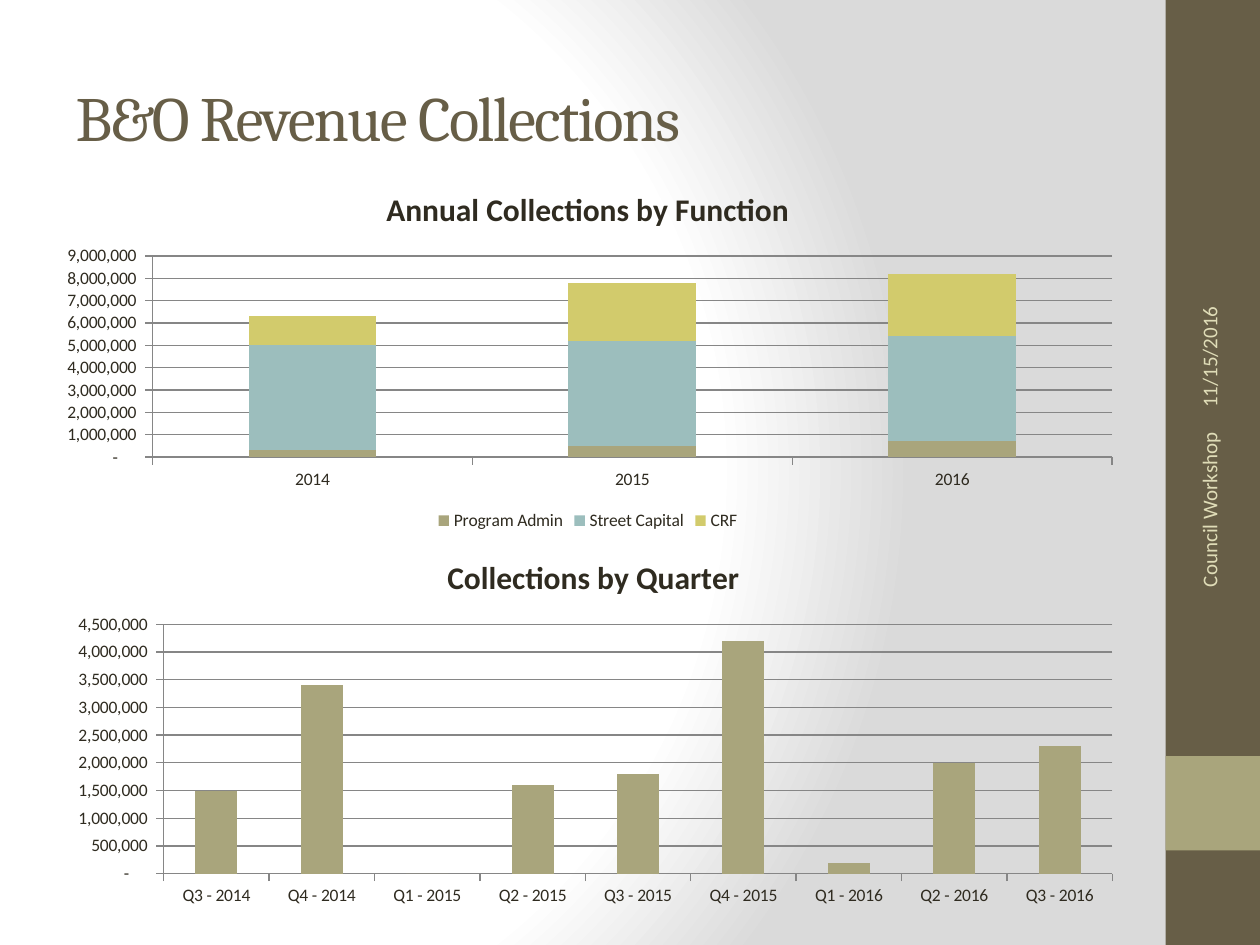
from dataclasses import dataclass

from lxml import etree
from pptx import Presentation
from pptx.chart.data import CategoryChartData
from pptx.dml.color import RGBColor
from pptx.enum.chart import XL_CHART_TYPE as ChartType
from pptx.enum.chart import XL_LEGEND_POSITION as LegendPos
from pptx.enum.chart import XL_TICK_MARK as Tick
from pptx.enum.shapes import MSO_SHAPE as Shape
from pptx.enum.text import MSO_ANCHOR as Anchor
from pptx.enum.text import PP_ALIGN as Align
from pptx.util import Inches, Pt

NUMBER_FORMAT = r'_(* #,##0_);_(* \(#,##0\);_(* "-"??_);_('
A_NS = "http://schemas.openxmlformats.org/drawingml/2006/main"


@dataclass(frozen=True)
class Theme:
    heading_font: str = "Cambria"
    body_font: str = "Calibri"
    title_size: int = 36
    chart_title_size: int = 18
    side_size: int = 12
    chart_size: int = 10
    brown: str = "675E47"
    olive: str = "A9A57C"
    teal: str = "9CBEBD"
    yellow: str = "D2CB6C"
    cream: str = "DFDCB7"
    ink: str = "2F2B20"
    grid: str = "868686"
    light: str = "FFFFFF"
    shade: str = "DADADA"


def rgb(color):
    return RGBColor.from_string(color)


def box(left, top, width, height):
    return [Inches(v) for v in (left, top, width, height)]


class SlideBuilder:
    def __init__(self, slide, theme):
        self.slide = slide
        self.theme = theme

    def set_font(self, font, size, color, name=None, bold=False):
        font.name = name or self.theme.body_font
        font.size = Pt(size)
        font.bold = bold
        font.color.rgb = rgb(color)

    def background(self):
        """Radial gradient centred left of the middle of the slide."""
        t = self.theme
        stops = "".join(
            f'<a:gs pos="{pos * 1000}"><a:srgbClr val="{color}"/></a:gs>'
            for pos, color in ((0, t.light), (75, t.light), (100, t.shade)))
        gradient = etree.fromstring(
            f'<a:gradFill xmlns:a="{A_NS}" rotWithShape="1"><a:gsLst>{stops}</a:gsLst>'
            '<a:path path="circle"><a:fillToRect l="20000" t="50000" r="100000" b="50000"/>'
            '</a:path></a:gradFill>')
        self.slide.background.fill.solid()
        solid = next(self.slide.element.iter(f"{{{A_NS}}}solidFill"))
        solid.getparent().replace(solid, gradient)

    def rect(self, place, color):
        sp = self.slide.shapes.add_shape(Shape.RECTANGLE, *box(*place))
        sp.shadow.inherit = False
        sp.fill.solid()
        sp.fill.fore_color.rgb = rgb(color)
        sp.line.fill.background()

    def title(self, place, text):
        t = self.theme
        sp = self.slide.shapes.title
        sp.left, sp.top, sp.width, sp.height = box(*place)
        tf = sp.text_frame
        tf.text = text
        tf.vertical_anchor = Anchor.MIDDLE
        p = tf.paragraphs[0]
        p.alignment = Align.LEFT
        self.set_font(p.font, t.title_size, t.brown, t.heading_font)
        p.runs[0].font._element.set("spc", "-100")

    def side_text(self, place, text, align):
        sp = self.slide.shapes.add_textbox(*box(*place))
        sp.rotation = 270
        tf = sp.text_frame
        tf.word_wrap = True
        tf.vertical_anchor = Anchor.MIDDLE
        p = tf.paragraphs[0]
        p.text = text
        p.alignment = align
        self.set_font(p.font, self.theme.side_size, self.theme.cream)

    def column_chart(self, place, kind, title, cats, series, major, overlap=0, legend=False):
        """Series is a list of (name, color, values)."""
        t = self.theme
        data = CategoryChartData(number_format=NUMBER_FORMAT)
        data.categories = cats
        for name, _, values in series:
            data.add_series(name, values)
        chart = self.slide.shapes.add_chart(kind, *box(*place), data).chart
        self.set_font(chart.font, t.chart_size, t.ink)

        chart.has_title = True
        p = chart.chart_title.text_frame.paragraphs[0]
        p.text = title
        self.set_font(p.font, t.chart_title_size, t.ink, bold=True)
        chart.chart_title.include_in_layout = False

        chart.has_legend = legend
        if legend:
            chart.legend.position = LegendPos.BOTTOM
            chart.legend.include_in_layout = False

        plot = chart.plots[0]
        plot.gap_width = 150
        plot.overlap = overlap
        plot.vary_by_categories = False
        for ser, (_, color, _) in zip(plot.series, series):
            ser.format.fill.solid()
            ser.format.fill.fore_color.rgb = rgb(color)

        value_axis = chart.value_axis
        value_axis.has_major_gridlines = True
        value_axis.major_unit = major
        value_axis.tick_labels.number_format = NUMBER_FORMAT
        value_axis.tick_labels.number_format_is_linked = False
        for axis in (chart.category_axis, value_axis):
            axis.major_tick_mark = Tick.OUTSIDE
            axis.minor_tick_mark = Tick.NONE
        for part in (chart.category_axis, value_axis, value_axis.major_gridlines):
            part.format.line.color.rgb = rgb(t.grid)
            part.format.line.width = Pt(0.75)


def main():
    theme = Theme()
    prs = Presentation()
    prs.slide_width, prs.slide_height = Inches(10), Inches(7.5)
    s = SlideBuilder(prs.slides.add_slide(prs.slide_layouts[5]), theme)

    s.background()
    s.rect((9.25, 0, 0.75, 7.5), theme.brown)
    s.rect((9.25, 6, 0.75, 0.75), theme.olive)
    s.title((0.5, 0.3, 8.33, 1.25), "B&O Revenue Collections")
    s.side_text((8.26, 1.8, 2.67, 0.4), "11/15/2016", Align.LEFT)
    s.side_text((8.3, 4.43, 2.59, 0.4), "Council Workshop", Align.RIGHT)

    s.column_chart(
        (0.33, 1.33, 8.67, 2.92), ChartType.COLUMN_STACKED,
        "Annual Collections by Function", ["2014", "2015", "2016"],
        [("Program Admin", theme.olive, (300000, 500000, 700000)),
         ("Street Capital", theme.teal, (4700000, 4700000, 4700000)),
         ("CRF", theme.yellow, (1300000, 2600000, 2800000))],
        major=1000000, overlap=100, legend=True)

    quarters = ["Q3 - 2014", "Q4 - 2014"]
    quarters += [f"Q{q} - 2015" for q in range(1, 5)]
    quarters += [f"Q{q} - 2016" for q in range(1, 4)]
    s.column_chart(
        (0.42, 4.25, 8.58, 3), ChartType.COLUMN_CLUSTERED,
        "Collections by Quarter", quarters,
        [("Series 1", theme.olive, (1500000, 3400000, 0, 1600000, 1800000,
                                    4200000, 200000, 2000000, 2300000))],
        major=500000)

    prs.save("out.pptx")


if __name__ == "__main__":
    main()
